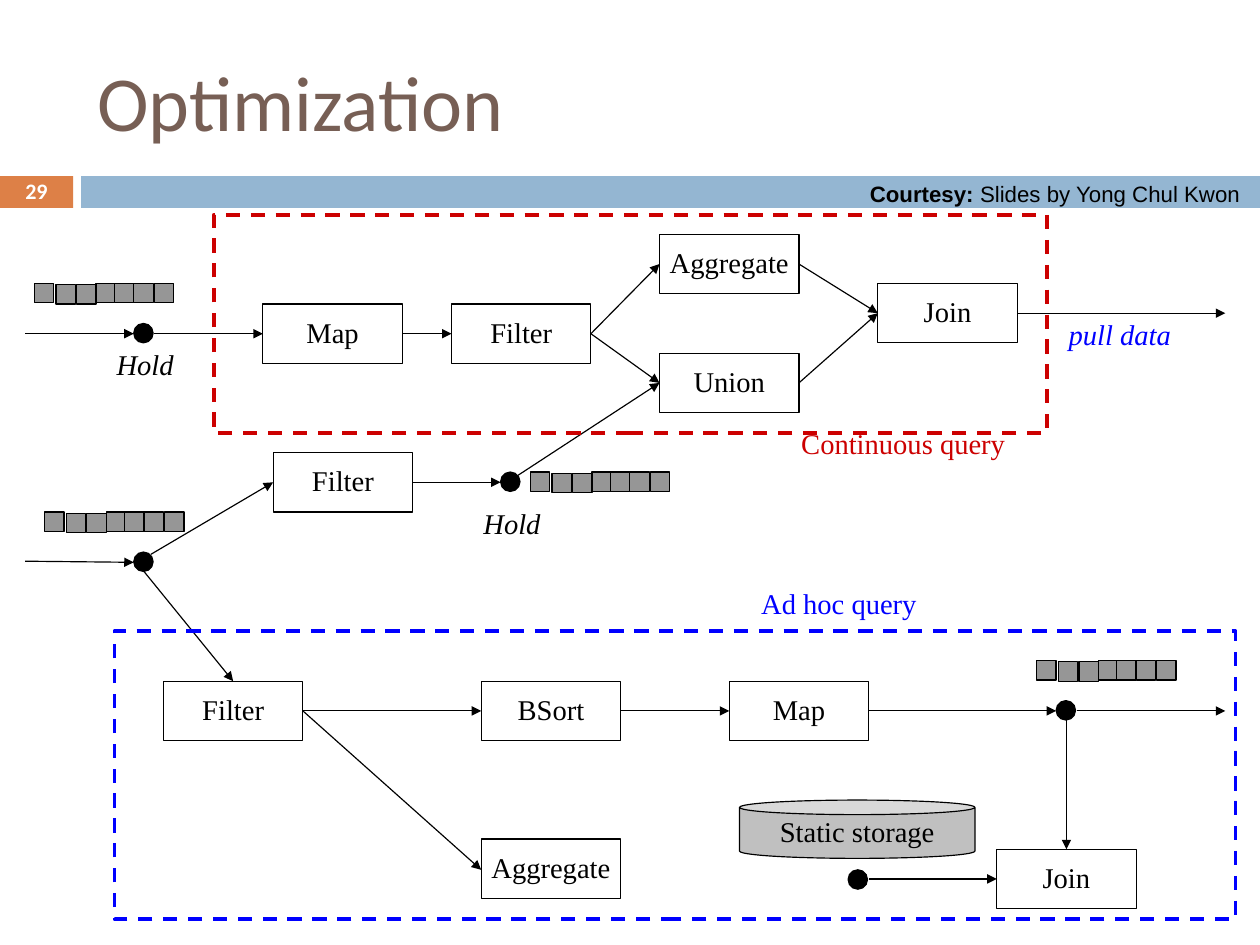
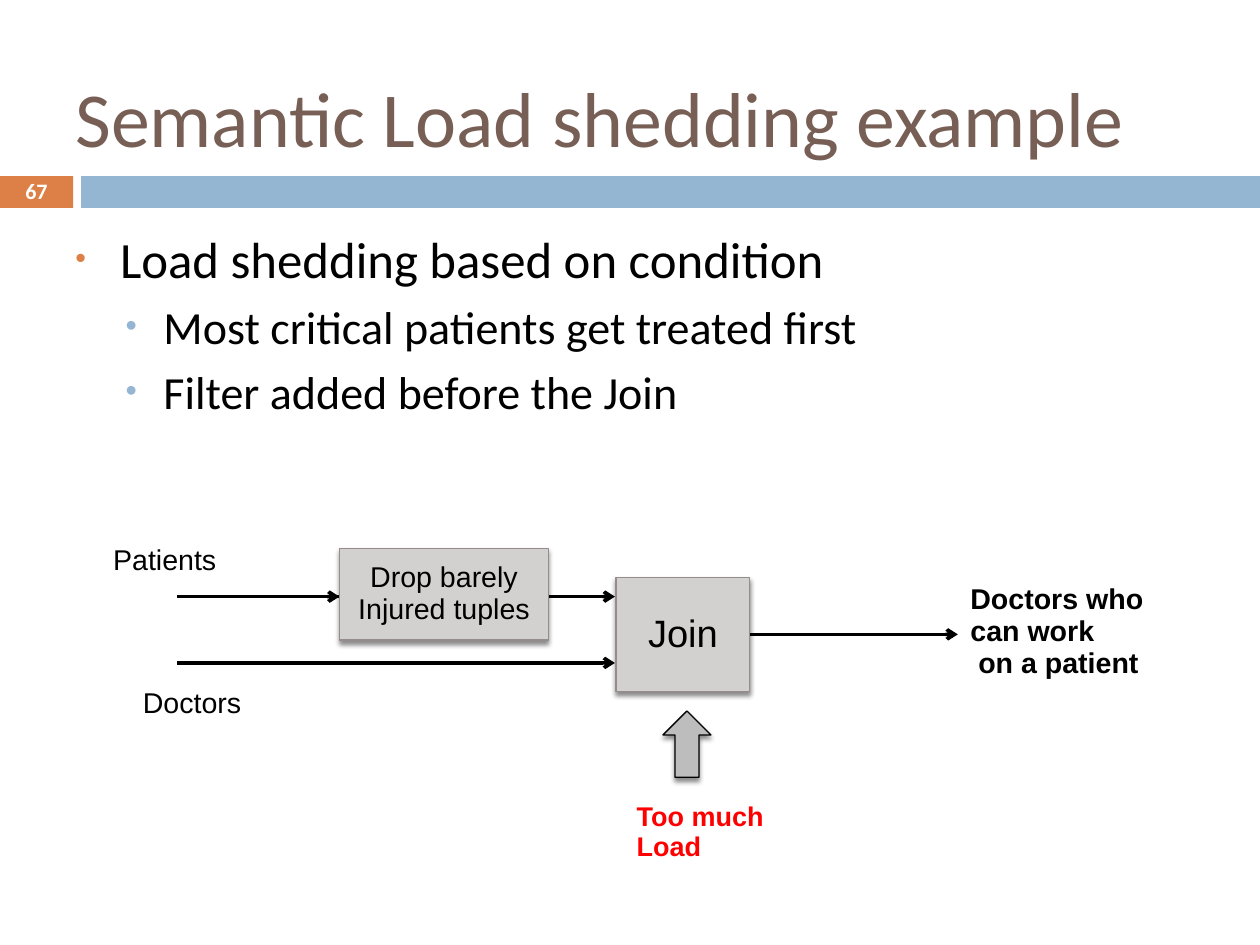
"""Build two slides on stream queries: optimization and load shedding."""
from lxml import etree
from pptx import Presentation
from pptx.dml.color import RGBColor
from pptx.enum.dml import MSO_LINE
from pptx.enum.shapes import MSO_CONNECTOR, MSO_SHAPE
from pptx.enum.text import MSO_ANCHOR, PP_ALIGN
from pptx.oxml import parse_xml
from pptx.oxml.ns import nsdecls, qn
from pptx.util import Inches, Pt

RECT, OVAL, CAN, ARROW = (MSO_SHAPE.RECTANGLE, MSO_SHAPE.OVAL,
                          MSO_SHAPE.CAN, MSO_SHAPE.UP_ARROW)
LEFT, CENTER = PP_ALIGN.LEFT, PP_ALIGN.CENTER
TOP, MIDDLE = MSO_ANCHOR.TOP, MSO_ANCHOR.MIDDLE
STRAIGHT, DASH = MSO_CONNECTOR.STRAIGHT, MSO_LINE.DASH

BLACK = RGBColor(0x00, 0x00, 0x00)
WHITE = RGBColor(0xFF, 0xFF, 0xFF)
BROWN = RGBColor(0x77, 0x5F, 0x55)
ORANGE = RGBColor(0xDD, 0x80, 0x47)
SKY = RGBColor(0x94, 0xB6, 0xD2)
CRIMSON = RGBColor(0xCC, 0x00, 0x00)
RED = RGBColor(0xFF, 0x00, 0x00)
BLUE = RGBColor(0x00, 0x00, 0xFF)
GRAY = RGBColor(0x96, 0x96, 0x96)
SILVER = RGBColor(0xC0, 0xC0, 0xC0)
STONE = RGBColor(0xD3, 0xD0, 0xD0)
ASH = RGBColor(0xBD, 0xBD, 0xBD)
TAUPE = RGBColor(0x96, 0x8C, 0x8C)

SANS, SERIF, HEAD = "Arial", "Times New Roman", "Calibri"
TIGHT = 0.93
WIDE, HIGH = 28 / 2.54, 21 / 2.54
SHADE = (f'<a:effectLst {nsdecls("a")}><a:outerShdw blurRad="38100" '
         'dist="30480" dir="5400000" rotWithShape="0"><a:srgbClr val="000000">'
         '<a:alpha val="45000"/></a:srgbClr></a:outerShdw></a:effectLst>')


def draw(home, kind, box, fill=None, edge=None, width=0.75):
    """Add a preset shape, or a text box when kind is None."""
    area = [Inches(v) for v in box]
    if kind is None:
        return home.add_textbox(*area)
    shape = home.add_shape(kind, *area)
    shape.shadow.inherit = False
    if fill is None:
        shape.fill.background()
    else:
        shape.fill.solid()
        shape.fill.fore_color.rgb = fill
    if edge is None:
        shape.line.fill.background()
    else:
        shape.line.color.rgb = edge
        shape.line.width = Pt(width)
    return shape


def write(shape, text, size=18, font=SERIF, color=BLACK, align=LEFT,
          anchor=TOP, wrap=False, space=TIGHT, bold=False, italic=False):
    """Fill a shape with text in one style."""
    frame = shape.text_frame
    frame.text = text
    frame.word_wrap = wrap
    frame.vertical_anchor = anchor
    frame.margin_left = frame.margin_right = Inches(0.11)
    frame.margin_top = frame.margin_bottom = Inches(0.06)
    for para in frame.paragraphs:
        para.alignment = align
        para.line_spacing = space
        for run in para.runs:
            run.font.name = font
            run.font.size = Pt(size)
            run.font.color.rgb = color
            run.font.bold = bold
            run.font.italic = italic


deck = Presentation()
deck.slide_width, deck.slide_height = Inches(WIDE), Inches(HIGH)

pages = []
for title, number, box in [
    ("Optimization", "29", (0.74, 0.28, 9.83, 1.19)),
    ("Semantic Load shedding example", "67", (0.55, 0.33, 9.92, 1.38)),
]:
    page = deck.slides.add_slide(deck.slide_layouts[6]).shapes
    draw(page, RECT, (0, 1.54, 0.64, 0.28), ORANGE)
    draw(page, RECT, (0.71, 1.54, WIDE - 0.71, 0.28), SKY)
    write(draw(page, None, (0, 1.53, 0.64, 0.28)), number, 13.9, HEAD, WHITE,
          CENTER, MIDDLE, True, 1.0, True)
    write(draw(page, None, box), title, 49, HEAD, BROWN,
          anchor=MIDDLE, wrap=True, space=1.0)
    pages.append(page)
query, shed = pages

flows = [
    (1.26, 5, 2.04, 5.96), (2.65, 6.22, 4.21, 6.22), (0.22, 4.91, 1.17, 4.92),
    (1.32, 4.85, 2.39, 4.22), (2.65, 6.22, 4.21, 7.61),
    (5.17, 2.92, 5.77, 3.35), (6.99, 2.31, 7.68, 2.74),
    (3.6, 4.22, 4.38, 4.22), (0.22, 2.92, 1.17, 2.92),
    (1.35, 2.92, 2.3, 2.92), (1.35, 2.92, 3.95, 2.92),
    (5.17, 2.92, 5.77, 2.31), (6.99, 3.35, 7.68, 2.74),
    (5.43, 6.22, 6.38, 6.22), (7.6, 6.22, 9.24, 6.22),
    (9.33, 6.3, 9.33, 7.43), (9.42, 6.22, 10.72, 6.22),
    (8.9, 2.74, 10.72, 2.74), (4.53, 4.16, 5.77, 3.35),
    (7.6, 7.69, 8.72, 7.69),
]
feeds = [
    (1.55, 5.8, 5.38, 5.8), (1.55, 5.22, 5.38, 5.22),
    (2.63, 5.22, 2.97, 5.22), (6.55, 5.55, 8.38, 5.55),
]
for page, lines, width, tip in [(query, flows, 0.75, "triangle"),
                                (shed, feeds, 2.25, "arrow")]:
    for ends in lines:
        line = page.add_connector(STRAIGHT, *[Inches(v) for v in ends])
        line.line.color.rgb = BLACK
        line.line.width = Pt(width)
        props = line.element.spPr
        etree.SubElement(props.find(qn("a:ln")), qn("a:tailEnd"), type=tip)
        etree.SubElement(props, qn("a:effectLst"))

for box, color in [((1.87, 1.88, 7.29, 1.91), CRIMSON),
                   ((1, 5.52, 9.81, 2.52), BLUE)]:
    zone = draw(query, RECT, box, None, color, 2.25)
    zone.line.dash_style = DASH

for name, left, top in [
    ("Map", 2.3, 2.66), ("Filter", 3.95, 2.66), ("Aggregate", 5.77, 2.05),
    ("Union", 5.77, 3.09), ("Join", 7.68, 2.48), ("Filter", 2.39, 3.96),
    ("Filter", 1.43, 5.96), ("BSort", 4.21, 5.96), ("Map", 6.38, 5.96),
    ("Aggregate", 4.21, 7.34), ("Join", 8.72, 7.43),
]:
    step = draw(query, RECT, (left, top, 1.22, 0.52), WHITE, BLACK)
    write(step, name, align=CENTER, anchor=MIDDLE)

store = draw(query, CAN, (6.47, 7, 2.06, 0.51), SILVER, BLACK)
store.adjustments[0] = 0.25
write(store, "Static storage", align=CENTER, anchor=MIDDLE)

for left, top in [(1.17, 2.83), (1.17, 4.83), (4.38, 4.13),
                  (9.24, 6.13), (7.42, 7.61)]:
    draw(query, OVAL, (left, top, 0.17, 0.17), BLACK, BLACK)

for left, top in [(0.3, 2.48), (0.39, 4.48), (4.64, 4.13), (9.07, 5.78)]:
    queue = query.add_group_shape().shapes
    for shift, drop in [(0, 0), (0.19, 0.01), (0.37, 0.01), (0.54, 0),
                        (0.7, 0), (0.87, 0), (1.05, 0)]:
        draw(queue, RECT, (left + shift, top + drop, 0.17, 0.17), GRAY, BLACK)

for text, box, color, slant in [
    ("Hold", (0.91, 3, 0.73, 0.39), BLACK, True),
    ("Hold", (4.12, 4.39, 0.73, 0.39), BLACK, True),
    ("pull data", (9.24, 2.74, 1.13, 0.39), BLUE, True),
    ("Continuous query", (6.9, 3.69, 2.02, 0.39), CRIMSON, False),
    ("Ad hoc query", (6.55, 5.09, 1.6, 0.39), BLUE, False),
]:
    write(draw(query, None, box), text, color=color, italic=slant)

credit = draw(query, None, (7.5, 1.54, 3.52, 0.32))
write(credit, "Courtesy: ", 14, SANS, wrap=True, bold=True)
source = credit.text_frame.paragraphs[0].add_run()
source.text = "Slides by Yong Chul Kwon"
source.font.name, source.font.size = SANS, Pt(14)
source.font.color.rgb = BLACK

points = [
    ("Load shedding based on condition", 0),
    ("Most critical patients get treated first", 1),
    ("Filter added before the Join", 1),
]
levels = [(32, 0.39, 0.39, 7.7, ORANGE, 60), (29, 0.77, 0.33, 6.1, SKY, 70)]
body = draw(shed, None, (0.55, 1.93, 9.92, 5.62))
write(body, "\n".join(text for text, _ in points), 32, HEAD,
      wrap=True, space=1.0)
for para, (_, level) in zip(body.text_frame.paragraphs, points):
    size, left, hang, gap, color, scale = levels[level]
    para.level = level
    para.space_before = Pt(gap)
    para.runs[0].font.size = Pt(size)
    props = para._p.get_or_add_pPr()
    props.set("marL", str(Inches(left)))
    props.set("indent", str(-Inches(hang)))
    tint = etree.SubElement(props, qn("a:buClr"))
    etree.SubElement(tint, qn("a:srgbClr"), val=str(color))
    etree.SubElement(props, qn("a:buSzPct"), val=str(scale * 1000))
    etree.SubElement(props, qn("a:buFont"), typeface=SANS)
    etree.SubElement(props, qn("a:buChar"), char="•")

for kind, box, fill, edge, text, size in [
    (RECT, (5.39, 5.05, 1.17, 1), STONE, TAUPE, "Join", 24),
    (RECT, (2.97, 4.8, 1.83, 0.8), STONE, TAUPE,
     "Drop barely\nInjured tuples", 18),
    (ARROW, (5.8, 6.22, 0.42, 0.58), ASH, BLACK, "", 18),
]:
    block = draw(shed, kind, box, fill, edge, 0.79)
    props = block.element.spPr
    props.replace(props.find(qn("a:effectLst")), parse_xml(SHADE))
    if text:
        write(block, text, size, SANS, align=CENTER, anchor=MIDDLE)

for text, box, size, color, wrap, bold in [
    ("Patients", (0.88, 4.71, 1.13, 0.39), 18, BLACK, False, False),
    ("Doctors", (1.14, 5.96, 1.09, 0.39), 18, BLACK, False, False),
    ("Doctors who can work\n on a patient", (8.38, 5.05, 1.88, 0.96),
     18, BLACK, True, True),
    ("Too much Load", (5.46, 6.96, 1.5, 0.63), 17, RED, True, True),
]:
    write(draw(shed, None, box), text, size, SANS, color, wrap=wrap, bold=bold)

deck.save("out.pptx")
